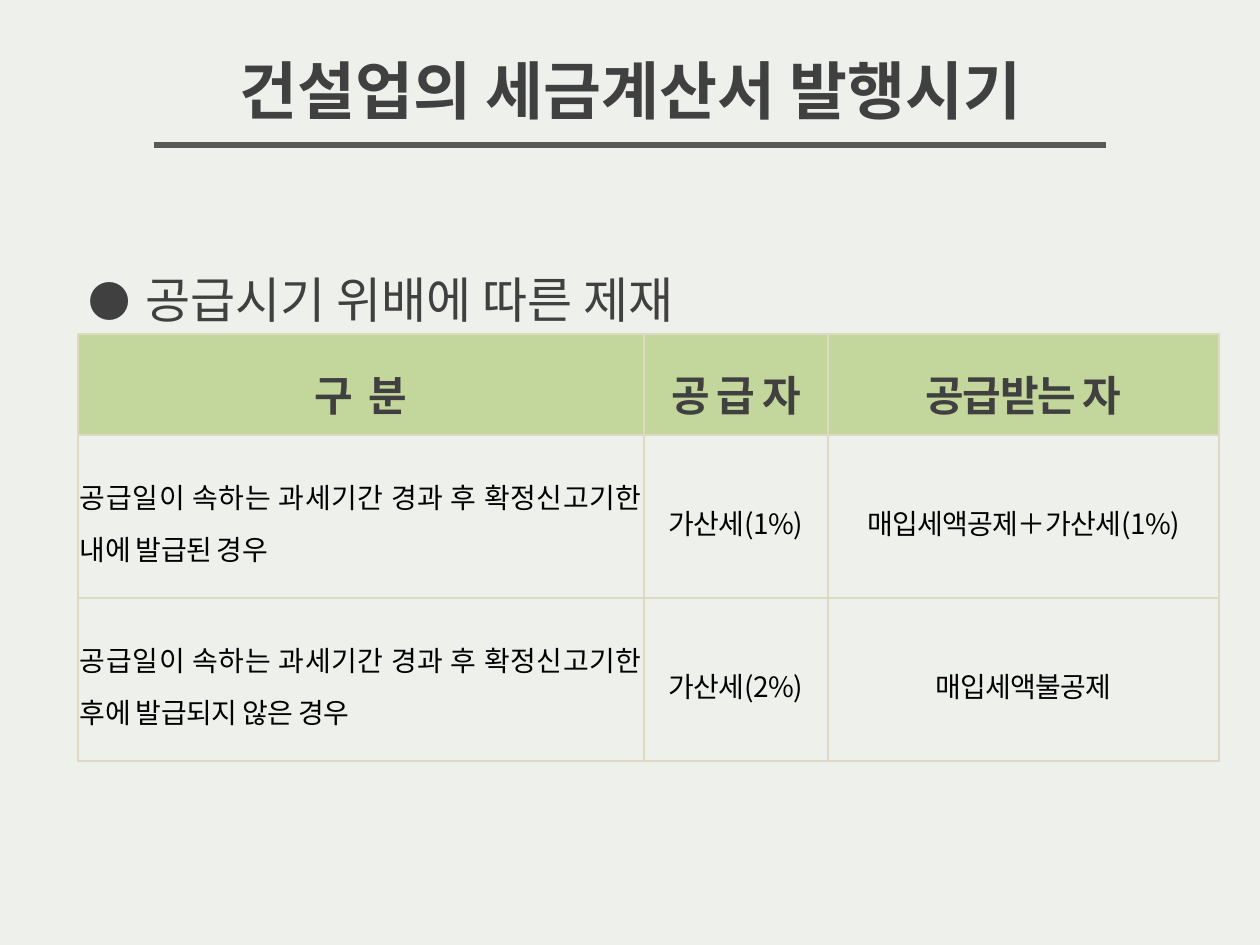
from lxml.etree import SubElement
from pptx import Presentation
from pptx.dml.color import RGBColor
from pptx.enum.shapes import MSO_CONNECTOR
from pptx.enum.text import MSO_ANCHOR, MSO_AUTO_SIZE, PP_ALIGN
from pptx.oxml import parse_xml
from pptx.oxml.ns import nsdecls, qn
from pptx.util import Emu, Pt

# Content
TITLE = "건설업의 세금계산서 발행시기"
BULLET = "공급시기 위배에 따른 제재"
ROWS = [
    ("구  분", "공 급 자", "공급받는 자"),
    ("공급일이 속하는 과세기간 경과 후 확정신고기한 내에 발급된 경우",
     "가산세(1%)", "매입세액공제＋가산세(1%)"),
    ("공급일이 속하는 과세기간 경과 후 확정신고기한 후에 발급되지 않은 경우",
     "가산세(2%)", "매입세액불공제"),
]
COLUMN_WIDTHS = (566, 184, 391)
ROW_HEIGHTS = (101, 163, 163)

# Style
KOREAN = "Noto Sans CJK KR"
BACKGROUND = RGBColor(0xEE, 0xF0, 0xEC)
DARK = RGBColor(0x40, 0x40, 0x40)
RULE = RGBColor(0x59, 0x59, 0x59)
BLACK = RGBColor(0, 0, 0)
GREEN = RGBColor(0xC3, 0xD6, 0x9B)
BORDER = RGBColor(0xDD, 0xD9, 0xC3)


def px(value):
    return Emu(round(value * 914400 / 126))


def place(shape, left, top, width, height):
    shape.left, shape.top = px(left), px(top)
    shape.width, shape.height = px(width), px(height)


def set_font(para, size, color, bold=False, latin=KOREAN, spacing=0):
    font = para.font
    font.name, font.size, font.bold = latin, Pt(size), bold
    font.color.rgb = color
    properties = para._p.pPr.find(qn("a:defRPr"))
    SubElement(properties, qn("a:ea")).set("typeface", KOREAN)
    if spacing:
        properties.set("spc", str(round(spacing * 100)))


def add_bullet(para, indent, percent):
    properties = para._p.get_or_add_pPr()
    properties.set("marL", str(px(indent)))
    properties.set("indent", str(-px(indent)))
    SubElement(properties, qn("a:buSzPct")).set("val", str(percent * 1000))
    SubElement(properties, qn("a:buFont")).set("typeface", KOREAN)
    SubElement(properties, qn("a:buChar")).set("char", "●")


def add_borders(cell):
    properties = cell._tc.get_or_add_tcPr()
    for index, side in enumerate(("lnL", "lnR", "lnT", "lnB")):
        properties.insert(index, parse_xml(
            f'<a:{side} {nsdecls("a")} w="{Pt(1)}"><a:solidFill>'
            f'<a:srgbClr val="{BORDER}"/></a:solidFill></a:{side}>'))


deck = Presentation()
deck.slide_width, deck.slide_height = px(1260), px(945)
page = deck.slides.add_slide(deck.slide_layouts[5])
page.background.fill.solid()
page.background.fill.fore_color.rgb = BACKGROUND

# Title and its rule
title = page.shapes.title
place(title, 149, 45, 963, 210)
frame = title.text_frame
frame.text = TITLE
frame.auto_size = MSO_AUTO_SIZE.NONE
frame.vertical_anchor = MSO_ANCHOR.TOP
frame.paragraphs[0].alignment = PP_ALIGN.CENTER
set_font(frame.paragraphs[0], 36, DARK, bold=True, latin="Arial")

rule = page.shapes.add_connector(
    MSO_CONNECTOR.STRAIGHT, px(154), px(145), px(1106), px(145))
rule.line.color.rgb, rule.line.width = RULE, Pt(3)
SubElement(rule._element.spPr, qn("a:effectLst"))

# Bullet line
box = page.shapes.add_textbox(px(76), px(175), px(684), px(135))
box.text_frame.word_wrap = False
para = box.text_frame.paragraphs[0]
para.text = BULLET
para.line_spacing = 2.5
add_bullet(para, 57, 86)
set_font(para, 28, DARK)

# Table
table = page.shapes.add_table(
    len(ROWS), len(COLUMN_WIDTHS), px(78), px(334),
    px(sum(COLUMN_WIDTHS)), px(sum(ROW_HEIGHTS))).table
table.first_row = table.horz_banding = False
for column, width in zip(table.columns, COLUMN_WIDTHS):
    column.width = px(width)
for row, height in zip(table.rows, ROW_HEIGHTS):
    row.height = px(height)

for r, texts in enumerate(ROWS):
    for c, text in enumerate(texts):
        cell = table.cell(r, c)
        cell.text = text
        cell.vertical_anchor = MSO_ANCHOR.MIDDLE
        cell.margin_left = cell.margin_right = px(2)
        cell.margin_top = cell.margin_bottom = px(2)
        para = cell.text_frame.paragraphs[0]
        para.line_spacing = 1.3
        para.alignment = PP_ALIGN.JUSTIFY if r and c == 0 else PP_ALIGN.CENTER
        if r == 0:
            cell.fill.solid()
            cell.fill.fore_color.rgb = GREEN
            set_font(para, 24, DARK, bold=True, spacing=-0.8)
        else:
            cell.fill.background()
            set_font(para, 16, BLACK, spacing=-0.3)
        add_borders(cell)

deck.save("out.pptx")
